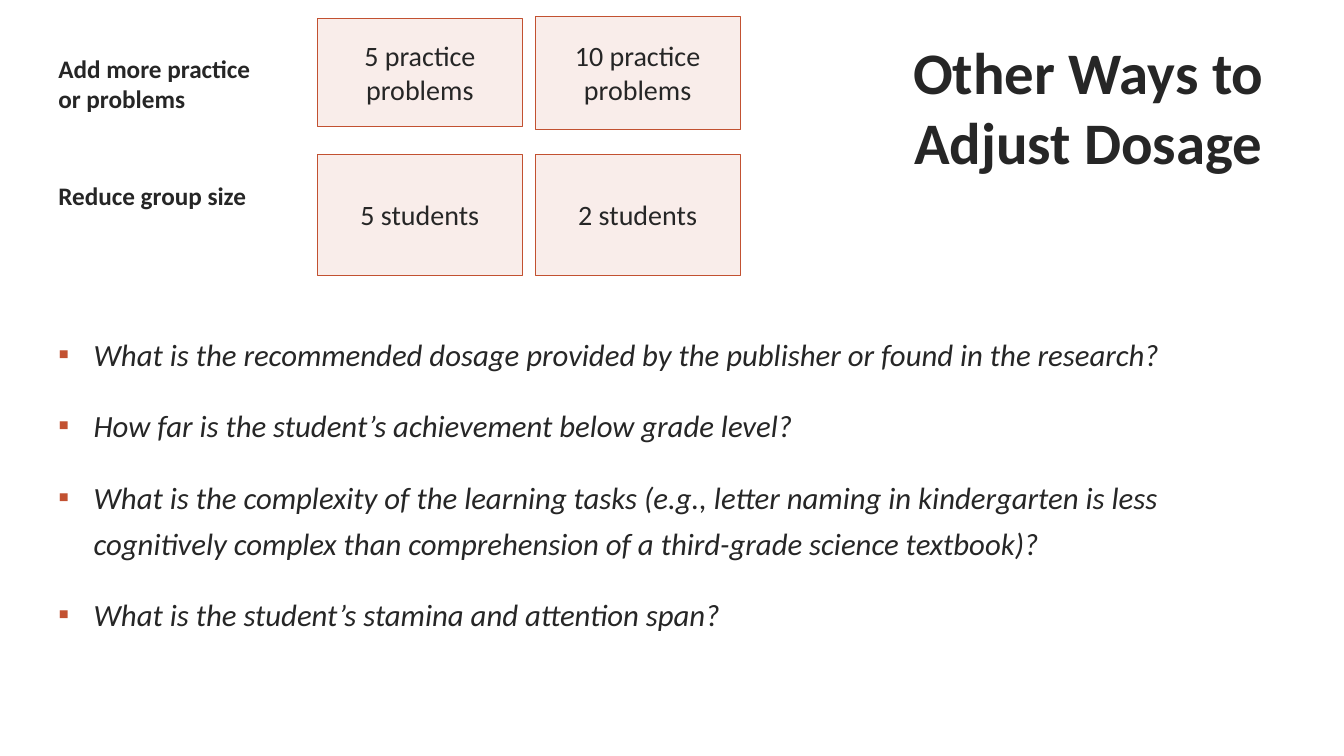
from lxml.etree import SubElement
from pptx import Presentation
from pptx.dml.color import RGBColor
from pptx.enum.shapes import MSO_SHAPE as Shape
from pptx.enum.text import MSO_ANCHOR as Anchor, MSO_AUTO_SIZE as AutoSize, PP_ALIGN as Align
from pptx.oxml.ns import qn
from pptx.util import Inches, Pt

INK = RGBColor(0x26, 0x26, 0x26)
RUST = RGBColor(0xC2, 0x51, 0x31)
BLUSH = RGBColor(0xF9, 0xED, 0xEA)
FONT = "Calibri"

SLIDE_W, SLIDE_H = 13.33, 7.5
MARGIN = 0.48

# Dosage grid: a label column, then two card columns
LABEL_W, CARD_W = 2.38, 2.03
FIRST_CARD, CARD_PITCH = 2.67, 2.16
# Label top and height, then (text, top, height) of each card, from the grid's top
DOSAGE_ROWS = [
    ("Add more practice or problems", 0.32, 0.71,
     [("5 practice problems", 0.02, 1.07), ("10 practice problems", 0, 1.12)]),
    ("Reduce group size", 1.58, 0.4,
     [("5 students", 1.37, 1.2), ("2 students", 1.37, 1.2)]),
]
QUESTIONS = [
    "What is the recommended dosage provided by the publisher or found in the research?",
    "How far is the student’s achievement below grade level?",
    "What is the complexity of the learning tasks (e.g., letter naming in kindergarten "
    "is less cognitively complex than comprehension of a third-grade science textbook)?",
    "What is the student’s stamina and attention span?",
]


def inches(*lengths):
    return [Inches(length) for length in lengths]


def add_text(paragraph, text, size, bold=False, italic=False):
    run = paragraph.add_run()
    run.text = text
    font = run.font
    font.name, font.size, font.bold, font.italic = FONT, Pt(size), bold, italic
    font.color.rgb = INK


def add_box(slide, box):
    frame = slide.shapes.add_textbox(*inches(*box)).text_frame
    frame.word_wrap = True
    return frame


def place_title(slide, box, text):
    title = slide.shapes.title
    title.left, title.top, title.width, title.height = inches(*box)
    frame = title.text_frame
    frame.auto_size = AutoSize.NONE
    frame.word_wrap = True
    frame.vertical_anchor = Anchor.BOTTOM
    frame.margin_left = frame.margin_right = frame.margin_top = frame.margin_bottom = 0
    heading = frame.paragraphs[0]
    heading.alignment = Align.CENTER
    add_text(heading, text, 42, bold=True)


def add_card(slide, box, text):
    card = slide.shapes.add_shape(Shape.RECTANGLE, *inches(*box))
    card.shadow.inherit = False
    card.fill.solid()
    card.fill.fore_color.rgb = BLUSH
    card.line.color.rgb = RUST
    card.line.width = Pt(0.5)
    frame = card.text_frame
    frame.word_wrap = True
    frame.vertical_anchor = Anchor.MIDDLE
    frame.paragraphs[0].alignment = Align.CENTER
    add_text(frame.paragraphs[0], text, 20)


def add_dosage_grid(slide, left, top):
    for label, label_top, label_h, cards in DOSAGE_ROWS:
        frame = add_box(slide, (left, top + label_top, LABEL_W, label_h))
        frame.auto_size = AutoSize.SHAPE_TO_FIT_TEXT
        add_text(frame.paragraphs[0], label, 18, bold=True)
        for column, (text, card_top, card_h) in enumerate(cards):
            card_left = left + FIRST_CARD + column * CARD_PITCH
            add_card(slide, (card_left, top + card_top, CARD_W, card_h), text)


def add_bullet(paragraph, indent):
    properties = paragraph._p.get_or_add_pPr()
    properties.set("marL", str(Inches(indent)))
    properties.set("indent", str(-Inches(indent)))
    color = SubElement(properties, qn("a:buClr"))
    SubElement(color, qn("a:srgbClr"), val=str(RUST))
    SubElement(properties, qn("a:buFont"), typeface=FONT)
    SubElement(properties, qn("a:buChar"), char="▪")


def add_questions(slide, box):
    frame = add_box(slide, box)
    for number, question in enumerate(QUESTIONS):
        paragraph = frame.add_paragraph() if number else frame.paragraphs[0]
        add_bullet(paragraph, 0.35)
        paragraph.line_spacing = 1.25
        if number:
            paragraph.space_before = Pt(18)
        add_text(paragraph, question, 22, italic=True)


def main():
    deck = Presentation()
    deck.slide_width, deck.slide_height = inches(SLIDE_W, SLIDE_H)
    slide = deck.slides.add_slide(deck.slide_layouts[5])
    place_title(slide, (8.35, 0.35, 4.89, 1.4), "Other Ways to Adjust Dosage")
    add_dosage_grid(slide, MARGIN, 0.16)
    add_questions(slide, (MARGIN, 3.19, 12.08, 2.76))
    deck.save("out.pptx")


if __name__ == "__main__":
    main()
